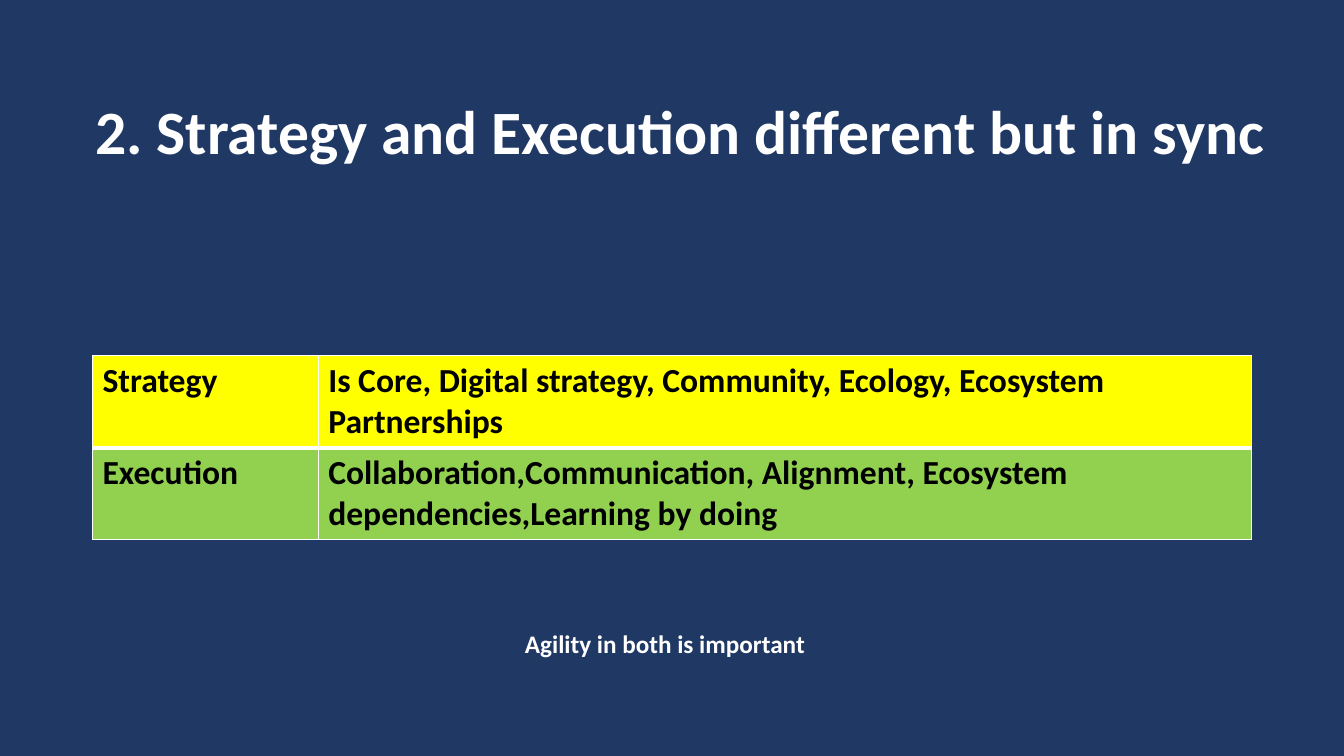
from dataclasses import dataclass

from lxml.etree import SubElement
from pptx import Presentation
from pptx.dml.color import RGBColor
from pptx.enum.text import MSO_ANCHOR, MSO_AUTO_SIZE, PP_ALIGN
from pptx.oxml.ns import qn
from pptx.util import Cm, Pt


@dataclass(frozen=True)
class Theme:
    font: str = "Calibri"
    back: str = "203864"
    light: str = "FFFFFF"
    dark: str = "000000"
    yellow: str = "FFFF00"
    green: str = "92D050"
    head: int = 44
    cell: int = 24
    note: int = 18
    thin: int = 1
    thick: int = 3


class Deck:
    def __init__(self, theme):
        self.theme = theme
        self.file = Presentation()
        self.file.slide_width = Cm(33.87)
        self.file.slide_height = Cm(19.05)
        self.slide = self.file.slides.add_slide(self.file.slide_layouts[5])
        fill = self.slide.background.fill
        fill.solid()
        fill.fore_color.rgb = RGBColor.from_string(theme.back)

    def label(self, frame, text, size, color):
        frame.text = text
        for run in frame.paragraphs[0].runs:
            font = run.font
            font.name = self.theme.font
            font.size = Pt(size)
            font.bold = True
            font.color.rgb = RGBColor.from_string(color)

    def title(self, text, left, top, width, height):
        shape = self.slide.shapes.title
        shape.left, shape.top = Cm(left), Cm(top)
        shape.width, shape.height = Cm(width), Cm(height)
        frame = shape.text_frame
        self.label(frame, text, self.theme.head, self.theme.light)
        frame.word_wrap = True
        frame.auto_size = MSO_AUTO_SIZE.NONE
        frame.vertical_anchor = MSO_ANCHOR.MIDDLE
        frame.margin_right = Cm(0.68)
        frame.margin_bottom = Cm(1.83)
        frame.paragraphs[0].alignment = PP_ALIGN.CENTER
        frame.paragraphs[0].line_spacing = 0.9

    def border(self, cell, widths):
        props = cell._tc.get_or_add_tcPr()
        for side, width in zip("LRTB", widths):
            line = SubElement(props, qn(f"a:ln{side}"), w=str(Pt(width)))
            fill = SubElement(line, qn("a:solidFill"))
            SubElement(fill, qn("a:srgbClr"), val=self.theme.light)

    def table(self, rows, fills, left, top, widths, height):
        frame = self.slide.shapes.add_table(
            len(rows), len(widths), Cm(left), Cm(top),
            Cm(sum(widths)), Cm(height * len(rows)))
        table = frame.table
        table.first_row = table.horz_banding = False
        for col, width in zip(table.columns, widths):
            col.width = Cm(width)
        thin, thick = self.theme.thin, self.theme.thick
        for i, (texts, color) in enumerate(zip(rows, fills)):
            table.rows[i].height = Cm(height)
            over = thick if i else thin
            under = thick if i < len(rows) - 1 else thin
            for j, text in enumerate(texts):
                cell = table.cell(i, j)
                self.label(cell.text_frame, text, self.theme.cell, self.theme.dark)
                self.border(cell, (thin, thin, over, under))
                cell.fill.solid()
                cell.fill.fore_color.rgb = RGBColor.from_string(color)

    def note(self, text, left, top, width, height):
        box = self.slide.shapes.add_textbox(
            Cm(left), Cm(top), Cm(width), Cm(height))
        frame = box.text_frame
        self.label(frame, text, self.theme.note, self.theme.light)
        frame.word_wrap = False
        frame.auto_size = MSO_AUTO_SIZE.SHAPE_TO_FIT_TEXT


def main():
    theme = Theme()
    deck = Deck(theme)
    deck.title("2. Strategy and Execution different but in sync", 0.86, 2.08, 33.02, 4.32)
    rows = [
        ("Strategy",
         "Is Core, Digital strategy, Community, Ecology, Ecosystem Partnerships"),
        ("Execution",
         "Collaboration,Communication, Alignment, Ecosystem "
         "dependencies,Learning by doing"),
    ]
    deck.table(rows, (theme.yellow, theme.green), 2.33, 8.96, (5.69, 23.52), 2.3)
    deck.note("Agility in both is important", 12.98, 15.7, 7.62, 1.02)
    deck.file.save("out.pptx")


if __name__ == "__main__":
    main()
